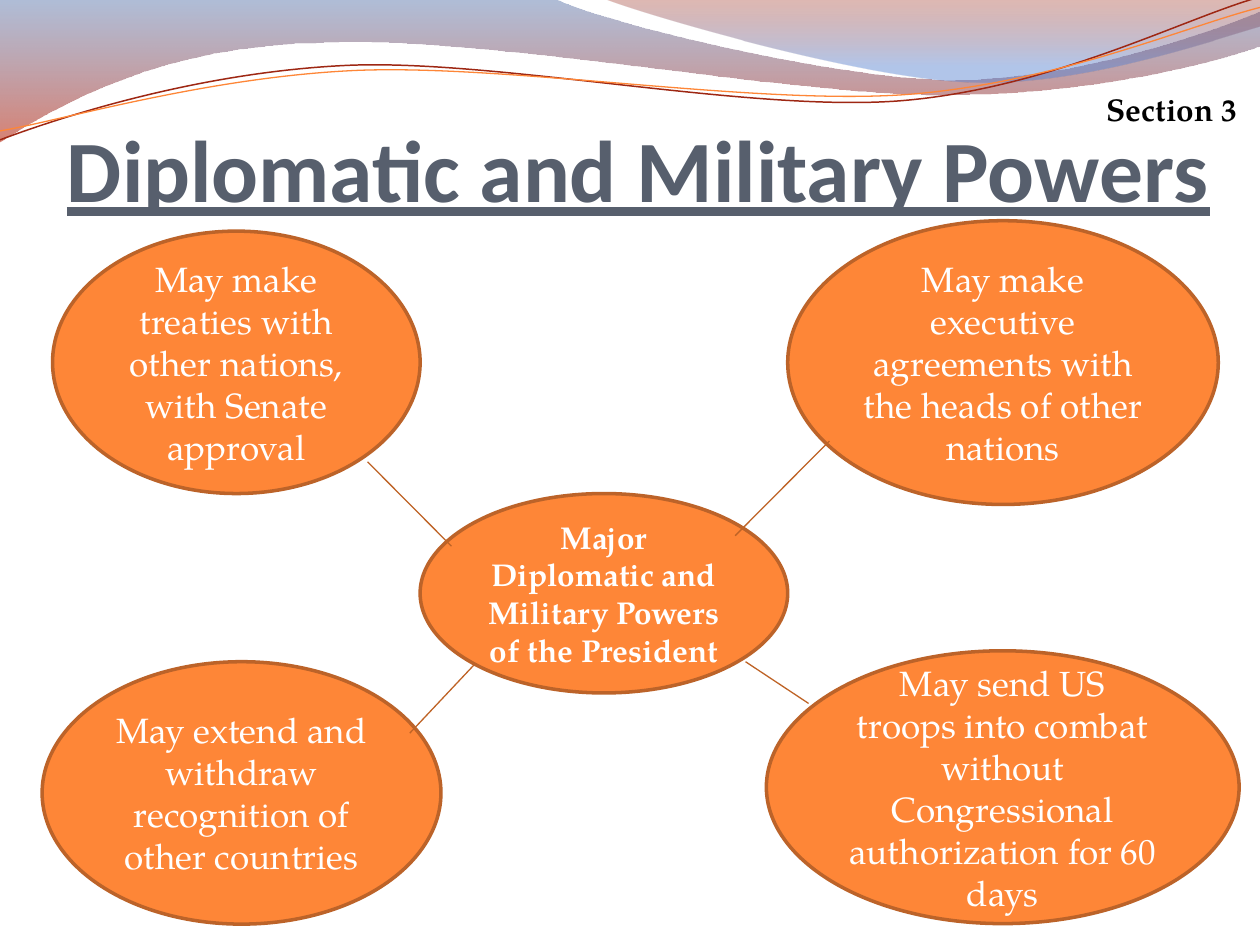
"""Build the slide on the president's diplomatic and military powers."""
from lxml.etree import SubElement
from pptx import Presentation
from pptx.dml.color import RGBColor
from pptx.enum.shapes import MSO_CONNECTOR as Connector, MSO_SHAPE as Shape
from pptx.enum.text import MSO_ANCHOR as Anchor, PP_ALIGN as Align
from pptx.oxml.ns import qn
from pptx.util import Cm, Pt

BODY_FONT = "TeX Gyre Pagella"
TITLE = "Diplomatic and Military Powers"
SECTION = "Section 3"
POWERS = [
    ("May make treaties with other nations, with Senate approval",
     (1.06, 4.66, 7.41, 5.29), 20, False),
    ("May extend and withdraw recognition of other countries",
     (0.85, 13.34, 8.04, 5.29), 20, False),
    ("Major Diplomatic and Military Powers of the President ",
     (8.47, 9.95, 7.41, 4.02), 18, True),
    ("May make executive agreements with the heads of other nations",
     (15.88, 4.45, 8.68, 5.72), 20, False),
    ("May send US troops into combat without Congressional authorization for 60 days",
     (15.45, 13.12, 9.53, 5.5), 20, False),
]
SPOKES = [
    (7.41, 9.31, 9.1, 11.01),
    (8.26, 14.78, 9.55, 13.41),
    (15.03, 13.34, 16.3, 14.18),
    (14.82, 10.8, 16.72, 8.89),
]
BANDS = [
    ([(0, -0.03), (11.18, -0.03),
      (12.09, 0.43, 16.87, 1.6, 19.25, 1.6),
      (21.67, 1.6, 24.33, 0.66, 25.4, 0.23), (25.43, 0.91),
      (24.97, 1.12, 22.1, 1.93, 18.95, 1.91),
      (15.8, 1.91, 9.7, 0.71, 6.53, 0.86),
      (3.28, 0.89, 1.17, 2.11, -0.03, 2.87), (0, -0.03)],
     [(0, "4F6EA8", 45), (1, "B61A00", 55)]),
    ([(12.17, -0.03),
      (12.93, 0.28, 17.32, 1.57, 19.53, 1.65),
      (21.74, 1.75, 24.41, 0.81, 25.4, 0.53), (25.4, 0), (12.17, -0.03)],
     [(0, "951500", 30), (0.8, "5681D1", 45)]),
]
STRAND_TURN = 357.3
STRANDS = [
    ([(-0.05, 2.22), (1.19, 1.82, 4.02, 1.04, 7.05, 1.05),
      (10.05, 1.07, 15.02, 2.37, 18.07, 2.29),
      (21.13, 2.2, 23.87, 0.91, 25.41, 0.55)], "9E2713", 0.85),
    ([(-0.04, 2.04), (1.16, 1.9, 4.18, 1.15, 7.2, 1.16),
      (10.25, 1.18, 15.13, 2.23, 18.18, 2.17),
      (21.21, 2.1, 23.93, 1.06, 25.45, 0.75)], "FE8637", 0.75),
]


def color(value):
    return RGBColor.from_string(value)


def add_curve(shapes, segments, close):
    start, *rest = [tuple(map(Cm, segment)) for segment in segments]
    builder = shapes.build_freeform(*start)
    builder.add_line_segments([segment[-2:] for segment in rest], close=close)
    curve = builder.convert_to_shape()
    curve.shadow.inherit = False
    sides = list(curve.element.spPr.iter(qn("a:lnTo")))
    for side, segment in zip(sides, rest):
        if len(segment) == 2:
            continue
        side.tag = qn("a:cubicBezTo")
        for point in list(side):
            side.remove(point)
        for x, y in zip(segment[::2], segment[1::2]):
            point = SubElement(side, qn("a:pt"))
            point.set("x", str(x - curve.left))
            point.set("y", str(y - curve.top))
    return curve


def add_band(shapes, segments, stops):
    band = add_curve(shapes, segments, True)
    band.line.fill.background()
    band.fill.gradient()
    band.fill.gradient_angle = 270
    for stop, (position, tint, _) in zip(band.fill.gradient_stops, stops):
        stop.position = position
        stop.color.rgb = color(tint)
    tints = band.element.spPr.iter(qn("a:srgbClr"))
    for tint, (_, _, opacity) in zip(list(tints), stops):
        SubElement(tint, qn("a:alpha")).set("val", str(opacity * 1000))


def set_line(shape, tint, width):
    shape.line.color.rgb = color(tint)
    shape.line.width = Pt(width)


def write(shape, text, size, tint, font=BODY_FONT, bold=False,
          align=Align.CENTER, anchor=Anchor.MIDDLE, underline=False):
    frame = shape.text_frame
    frame.text = text
    frame.word_wrap = True
    frame.vertical_anchor = anchor
    paragraph = frame.paragraphs[0]
    paragraph.alignment = align
    style = paragraph.runs[0].font
    style.name, style.size, style.bold = font, Pt(size), bold
    style.underline = underline
    style.color.rgb = color(tint)


def main():
    deck = Presentation()
    deck.slide_width, deck.slide_height = Cm(25.4), Cm(19.05)
    shapes = deck.slides.add_slide(deck.slide_layouts[6]).shapes

    for segments, stops in BANDS:
        add_band(shapes, segments, stops)
    for segments, tint, width in STRANDS:
        strand = add_curve(shapes, segments, False)
        strand.rotation = STRAND_TURN
        strand.fill.background()
        set_line(strand, tint, width)

    title = shapes.add_textbox(Cm(1.35), Cm(1.95), Cm(23.7), Cm(2.49))
    write(title, TITLE, 50, "575F6D", "Calibri", True, Align.LEFT, Anchor.BOTTOM, True)
    inset = title.text_frame
    inset.margin_left = inset.margin_right = inset.margin_bottom = 0

    for text, box, size, bold in POWERS:
        power = shapes.add_shape(Shape.OVAL, *map(Cm, box))
        power.shadow.inherit = False
        power.fill.solid()
        power.fill.fore_color.rgb = color("FE8637")
        set_line(power, "BC6329", 2)
        write(power, text, size, "FFFFFF", bold=bold)

    for ends in SPOKES:
        spoke = shapes.add_connector(Connector.STRAIGHT, *map(Cm, ends))
        set_line(spoke, "BE6326", 0.75)
        SubElement(spoke.element.spPr, qn("a:effectLst"))

    section = shapes.add_textbox(Cm(21.17), Cm(1.69), Cm(4.02), Cm(1.02))
    write(section, SECTION, 18, "000000", bold=True, align=Align.RIGHT, anchor=Anchor.TOP)

    deck.save("out.pptx")


if __name__ == "__main__":
    main()
